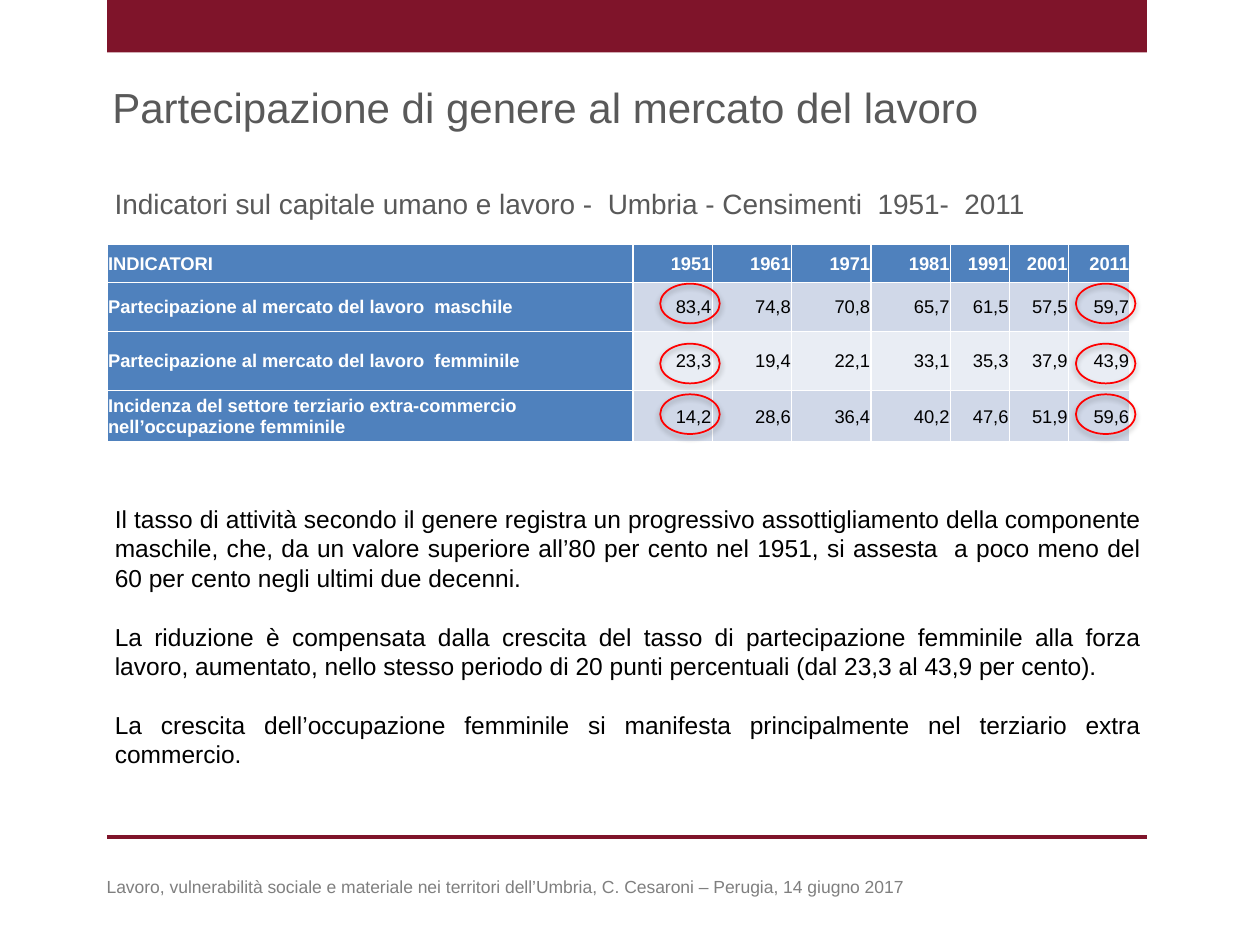
from lxml.etree import SubElement
from pptx import Presentation
from pptx.dml.color import RGBColor
from pptx.enum.shapes import MSO_CONNECTOR as Connector, MSO_SHAPE as Shape
from pptx.enum.text import MSO_ANCHOR as Anchor, MSO_AUTO_SIZE as AutoSize, PP_ALIGN as Align
from pptx.oxml.ns import qn
from pptx.util import Cm, Pt

FONT = "Arial"
CRIMSON, GREY, FOOTER_GREY = "7F142A", "595959", "7F7F7F"
HEADER_BLUE, BANDS = "4F81BD", ("E9EDF4", "D0D8E8")
BLACK, WHITE, RED = "000000", "FFFFFF", "FF0000"

COLUMN_WIDTHS = [10.6] + [1.6] * 4 + [1.19, 1.19, 1.24]
ROW_HEIGHTS = [0.76, 0.99, 1.19, 1.04]
INDICATORS = [
    ["INDICATORI", "1951", "1961", "1971", "1981", "1991", "2001", "2011"],
    ["Partecipazione al mercato del lavoro  maschile",
     "83,4", "74,8", "70,8", "65,7", "61,5", "57,5", "59,7"],
    ["Partecipazione al mercato del lavoro  femminile",
     "23,3", "19,4", "22,1", "33,1", "35,3", "37,9", "43,9"],
    ["Incidenza del settore terziario extra-commercio nell’occupazione femminile",
     "14,2", "28,6", "36,4", "40,2", "47,6", "51,9", "59,6"],
]
COMMENTS = [
    "Il tasso di attività secondo il genere registra un progressivo assottigliamento della "
    "componente maschile, che, da un valore superiore all’80 per cento nel 1951, si assesta  "
    "a poco meno del 60 per cento negli ultimi due decenni.",
    "La riduzione è compensata dalla crescita del tasso di partecipazione femminile alla forza "
    "lavoro, aumentato, nello stesso periodo di 20 punti percentuali (dal 23,3 al 43,9 per cento).",
    "La crescita dell’occupazione femminile si manifesta principalmente nel terziario extra "
    "commercio.",
]


def color(value):
    return RGBColor.from_string(value)


def style_paragraph(paragraph, size, text_color, align=Align.LEFT, bold=False):
    paragraph.alignment = align
    font = paragraph.font
    font.name, font.size, font.bold = FONT, Pt(size), bold
    font.color.rgb = color(text_color)


def place(shape, left, top, width, height):
    shape.left, shape.top = Cm(left), Cm(top)
    shape.width, shape.height = Cm(width), Cm(height)


def fill_text(shape, text, size, text_color):
    frame = shape.text_frame
    frame.word_wrap = True
    frame.auto_size = AutoSize.NONE
    frame.vertical_anchor = Anchor.TOP
    frame.text = text
    style_paragraph(frame.paragraphs[0], size, text_color)


def add_text(slide, box, text, size, text_color):
    shape = slide.shapes.add_textbox(*map(Cm, box))
    fill_text(shape, text, size, text_color)


def add_band(slide):
    band = slide.shapes.add_shape(Shape.RECTANGLE, Cm(2.16), 0, Cm(20.96), Cm(1.06))
    band.shadow.inherit = False
    band.fill.solid()
    band.fill.fore_color.rgb = color(CRIMSON)
    band.line.fill.background()


def add_rule(slide):
    rule = slide.shapes.add_connector(
        Connector.STRAIGHT, Cm(2.16), Cm(16.87), Cm(23.12), Cm(16.87))
    rule.line.color.rgb = color(CRIMSON)
    rule.line.width = Pt(2)
    SubElement(rule._element.spPr, qn("a:effectLst"))


def fill_comments(body):
    place(body, 2.06, 10.03, 21.21, 6.25)
    frame = body.text_frame
    frame.word_wrap = True
    frame.auto_size = AutoSize.NONE
    frame.text = "\n".join(COMMENTS)
    for paragraph in frame.paragraphs:
        properties = paragraph._p.get_or_add_pPr()
        properties.set("marL", "0")
        properties.set("indent", "0")
        SubElement(properties, qn("a:buNone"))
        paragraph.space_before = Pt(0)
        paragraph.space_after = Pt(16.8)
        style_paragraph(paragraph, 14, BLACK, Align.JUSTIFY)


def add_indicator_table(slide):
    # The default table style supplies the white borders
    table = slide.shapes.add_table(
        len(ROW_HEIGHTS), len(COLUMN_WIDTHS), Cm(2.16), Cm(4.93),
        Cm(sum(COLUMN_WIDTHS)), Cm(sum(ROW_HEIGHTS))).table
    table.first_col = True
    for column, width in zip(table.columns, COLUMN_WIDTHS):
        column.width = Cm(width)
    for r, (height, values) in enumerate(zip(ROW_HEIGHTS, INDICATORS)):
        table.rows[r].height = Cm(height)
        for c, value in enumerate(values):
            cell = table.cell(r, c)
            is_heading = r == 0 or c == 0
            cell.text = value
            cell.vertical_anchor = Anchor.MIDDLE
            cell.margin_left = cell.margin_right = cell.margin_top = Cm(0.02)
            cell.margin_bottom = 0
            cell.fill.solid()
            cell.fill.fore_color.rgb = color(HEADER_BLUE if is_heading else BANDS[r % 2])
            style_paragraph(cell.text_frame.paragraphs[0], 10.5,
                            WHITE if is_heading else BLACK,
                            Align.RIGHT if c else Align.LEFT, is_heading)


def add_highlight(slide, left, top):
    # Keeps the soft shadow of the theme
    ring = slide.shapes.add_shape(Shape.OVAL, Cm(left), Cm(top), Cm(1.2), Cm(0.8))
    ring.fill.background()
    ring.line.color.rgb = color(RED)
    ring.line.width = Pt(1)


def main():
    presentation = Presentation()
    presentation.slide_width, presentation.slide_height = Cm(25.4), Cm(19.05)
    slide = presentation.slides.add_slide(presentation.slide_layouts[1])

    # Frame of the page
    add_band(slide)
    add_rule(slide)

    # Title and subtitle
    title = slide.shapes.title
    place(title, 2.01, 1.52, 20.93, 1.27)
    fill_text(title, "Partecipazione di genere al mercato del lavoro", 24, GREY)
    add_text(slide, (2.06, 3.63, 19.48, 0.94),
             "Indicatori sul capitale umano e lavoro -  Umbria - Censimenti  1951-  2011", 16, GREY)

    # Indicators, with the first and last census ringed
    add_indicator_table(slide)
    for left, tops in ((13.31, (5.72, 6.93, 7.95)), (21.69, (5.72, 6.93, 7.95))):
        for top in tops:
            add_highlight(slide, left, top)

    # Comments and footer
    fill_comments(slide.placeholders[1])
    add_text(slide, (1.9, 17.53, 17.02, 0.69),
             "Lavoro, vulnerabilità sociale e materiale nei territori dell’Umbria, "
             "C. Cesaroni – Perugia, 14 giugno 2017", 10, FOOTER_GREY)

    presentation.save("out.pptx")


if __name__ == "__main__":
    main()
